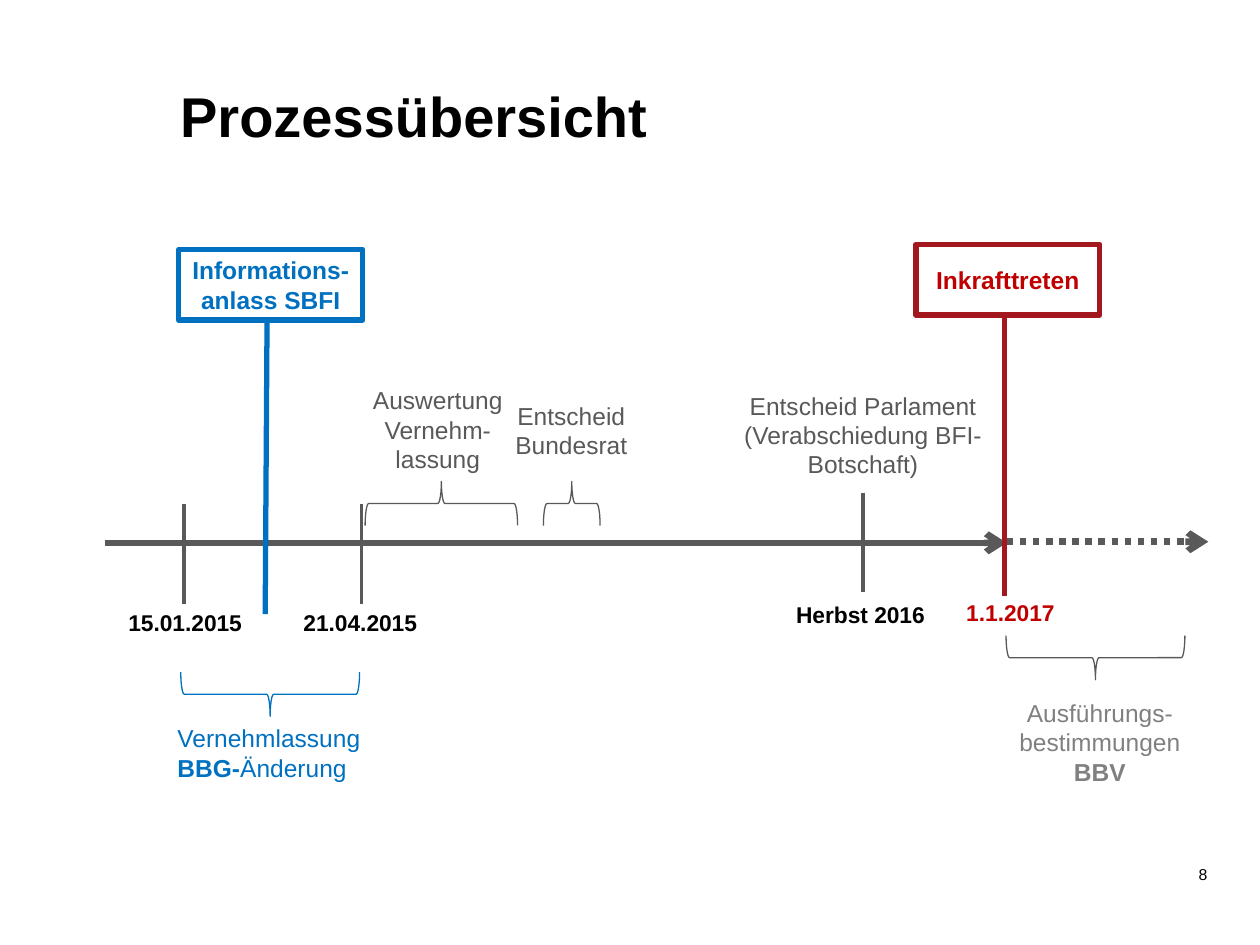
from lxml.etree import SubElement
from pptx import Presentation
from pptx.dml.color import RGBColor
from pptx.enum.dml import MSO_LINE as Dash
from pptx.enum.shapes import MSO_CONNECTOR as Conn, MSO_SHAPE as Shape
from pptx.enum.text import MSO_ANCHOR as Anchor, PP_ALIGN as Align
from pptx.oxml.ns import qn
from pptx.util import Pt

BLACK, GREY, PALE = "000000", "595959", "808080"
BLUE, RED, DARK = "0070C0", "C00000", "A3171E"


def paint(color, code):
    color.rgb = RGBColor.from_string(code)


def write(shape, paras, size, code, bold=False, align=Align.LEFT, anchor=Anchor.TOP):
    """Fill a shape with paragraphs, each a list of (text, bold) runs or a string."""
    frame = shape.text_frame
    frame.word_wrap = True
    frame.vertical_anchor = anchor
    for i, runs in enumerate(paras):
        para = frame.add_paragraph() if i else frame.paragraphs[0]
        para.alignment = align
        for text, heavy in [(runs, bold)] if isinstance(runs, str) else runs:
            run = para.add_run()
            run.text = text
            style = {"name": "Arial", "size": Pt(size), "bold": heavy}
            for key, value in style.items():
                setattr(run.font, key, value)
            paint(run.font.color, code)


prs = Presentation()
prs.slide_width, prs.slide_height = Pt(720), Pt(540)
slide = prs.slides.add_slide(prs.slide_layouts[5])
shapes = slide.shapes

title = shapes.title
place = {"left": 95.76, "top": 39.6, "width": 495.36, "height": 56.16}
for key, value in place.items():
    setattr(title, key, Pt(value))
title.text_frame.margin_top = Pt(7)
write(title, ["Prozessübersicht"], 32, BLACK, True)

page = shapes.add_textbox(Pt(521.28), Pt(489.6), Pt(175.68), Pt(28.8))
write(page, ["8"], 9, BLACK, align=Align.RIGHT)
page.text_frame.paragraphs[0].line_spacing = Pt(12)

# Time axis and its ticks: x1, y1, x2, y2, width, dash, arrow
axis = 310.2
lines = [
    (59.8, axis, 575.3, axis, 3.75, None, True),
    (575.3, axis - 0.6, 690.5, axis - 0.6, 3.75, Dash.ROUND_DOT, True),
]
for x, y in [(105.1, 288), (206.6, 288), (493.2, 281.5)]:
    lines.append((x, y, x, y + 56.9, 2, None, False))
for x1, y1, x2, y2, width, dash, arrow in lines:
    line = shapes.add_connector(Conn.STRAIGHT, Pt(x1), Pt(y1), Pt(x2), Pt(y2))
    line.line.width = Pt(width)
    paint(line.line.color, GREY)
    if dash:
        line.line.dash_style = dash
    if arrow:
        SubElement(line.line._get_or_add_ln(), qn("a:tailEnd"), type="arrow")
    SubElement(line._element.spPr, qn("a:effectLst"))

# Dates under the axis
dates = [
    ("15.01.2015", 66.24, 344.2, 96.5, BLACK),
    ("21.04.2015", 166.32, 344.2, 96.5, BLACK),
    ("Herbst 2016", 447.84, 339.8, 96.5, BLACK),
    ("1.1.2017", 545.04, 338.4, 73.4, RED),
]
for text, x, y, width, code in dates:
    box = shapes.add_textbox(Pt(x), Pt(y), Pt(width), Pt(23))
    write(box, [text], 13, code, True)

# Phases: centre x, centre y and span of each brace, turn, colour
braces = [
    (154.4, 396.7, 102.2, 270, BLUE),
    (252.2, 287.7, 87.1, 90, GREY),
    (326.7, 287.7, 32.4, 90, GREY),
    (626, 375.8, 102.2, 270, GREY),
]
deep = 25.2
for x, y, span, turn, code in braces:
    brace = shapes.add_shape(
        Shape.LEFT_BRACE, Pt(x - deep / 2), Pt(y - span / 2), Pt(deep), Pt(span))
    brace.rotation = turn
    brace.shadow.inherit = False
    brace.adjustments[0], brace.adjustments[1] = 0.08, 0.5
    brace.fill.background()
    brace.line.width = Pt(0.75)
    paint(brace.line.color, code)

# Labels of the phases
labels = [
    (["Vernehmlassung", [("BBG-", True), ("Änderung", False)]],
     94.3, 409.7, 120.2, 41, BLUE, Align.LEFT),
    (["Auswertung Vernehm-lassung"], 190.1, 216.7, 120.2, 58.3, GREY, Align.CENTER),
    (["Entscheid Bundesrat"], 266.4, 225.4, 120.2, 41, GREY, Align.CENTER),
    (["Entscheid Parlament", "(Verabschiedung BFI-Botschaft)"],
     417.6, 219.6, 151.2, 58.3, GREY, Align.CENTER),
    ([[("Ausführungs-bestimmungen ", False), ("BBV", True)]],
     565.2, 395.3, 126.7, 58.3, PALE, Align.CENTER),
]
for paras, x, y, width, height, code, align in labels:
    box = shapes.add_textbox(Pt(x), Pt(y), Pt(width), Pt(height))
    write(box, paras, 14, code, align=align)

# Milestones, each with a leader line down across the axis
marks = [
    ("Informations-anlass SBFI", 102.2, 142.6, BLUE, BLUE, (5.17, 0.47, 1.03, 0.48)),
    ("Inkrafttreten", 523.4, 139.7, DARK, RED, (4.99, 0.48, 1.03, 0.48)),
]
for text, x, y, edge, code, ends in marks:
    mark = shapes.add_shape(Shape.LINE_CALLOUT_1, Pt(x), Pt(y), Pt(105.1), Pt(40.3))
    mark.shadow.inherit = False
    for i, value in enumerate(ends):
        mark.adjustments[i] = value
    mark.fill.solid()
    paint(mark.fill.fore_color, "FFFFFF")
    mark.line.width = Pt(3)
    paint(mark.line.color, edge)
    write(mark, [text], 14, code, True, Align.CENTER, Anchor.MIDDLE)

prs.save("out.pptx")
